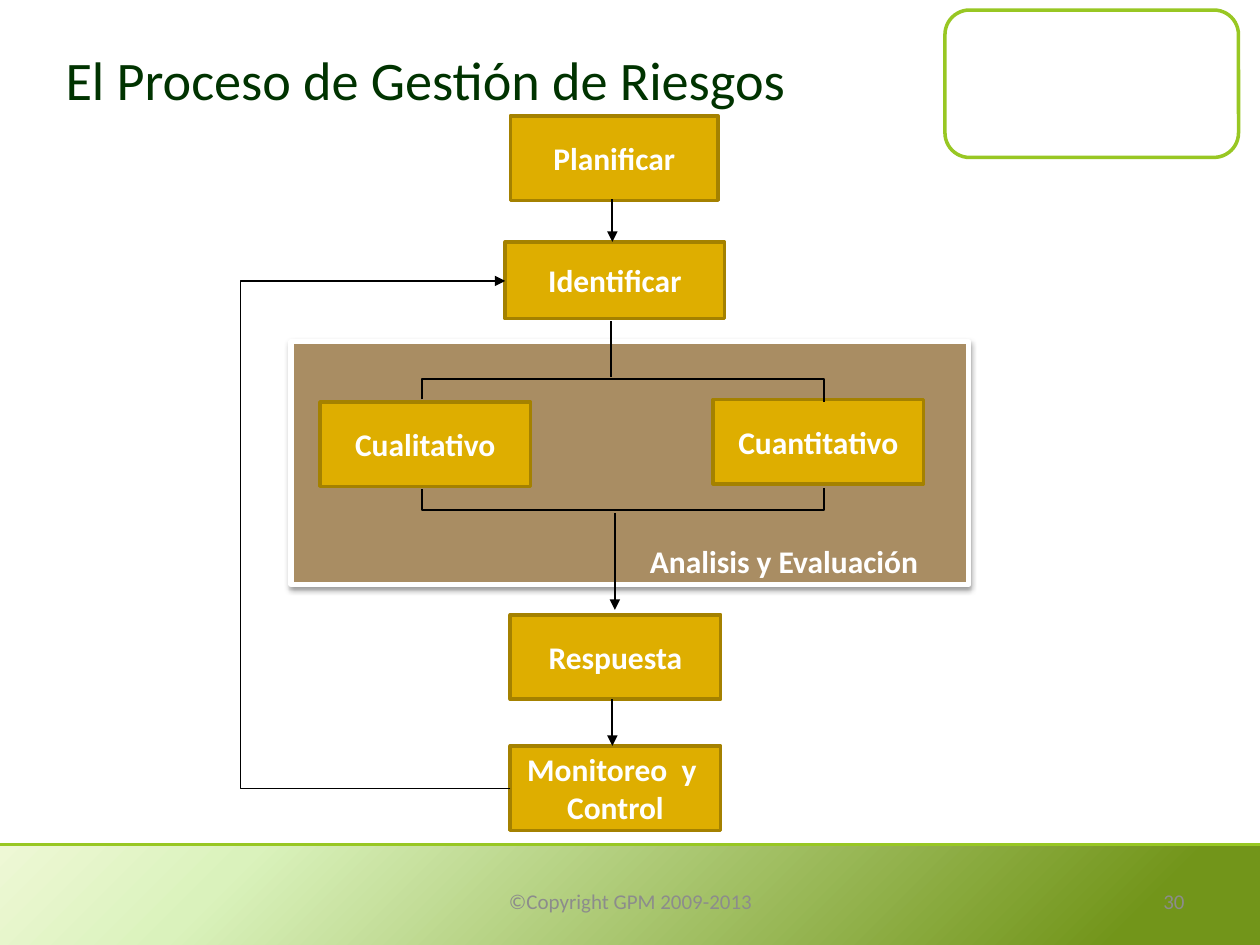
"""Build the risk management process slide."""
import copy

import pptx
import pptx.dml.color
import pptx.enum.shapes
import pptx.enum.text
import pptx.oxml
import pptx.oxml.ns
import pptx.util

Inches, Pt = pptx.util.Inches, pptx.util.Pt
RGB = pptx.dml.color.RGBColor.from_string
SHAPE = pptx.enum.shapes.MSO_SHAPE
ALIGN = pptx.enum.text.PP_ALIGN
MIDDLE = pptx.enum.text.MSO_ANCHOR.MIDDLE
NS = pptx.oxml.ns.nsdecls("a")
COLORS = {
    "white": "FFFFFF", "black": "000000", "green": "98C723", "title": "003300",
    "panel": "A98D63", "box": "DEAE00", "box_line": "A48100", "footer": "8C8C8C",
}


def style_line(s, color, width, arrow=False):
    s.line.color.rgb = RGB(COLORS[color])
    s.line.width = Pt(width)
    spPr = s._element.spPr
    if arrow:
        ln = spPr.find(pptx.oxml.ns.qn("a:ln"))
        ln.append(pptx.oxml.parse_xml(f'<a:tailEnd {NS} type="triangle"/>'))
    spPr.append(pptx.oxml.parse_xml(f"<a:effectLst {NS}/>"))


def write(s, text, size, color, align, bold=False, wrap=True, anchor=MIDDLE):
    tf = s.text_frame
    tf.text = text
    tf.word_wrap = wrap
    tf.vertical_anchor = anchor
    values = {"name": "Calibri", "size": Pt(size), "bold": bold}
    for p in tf.paragraphs:
        p.alignment = align
        for r in p.runs:
            for name, value in values.items():
                setattr(r.font, name, value)
            r.font.color.rgb = RGB(COLORS[color])


prs = pptx.Presentation()
prs.slide_width, prs.slide_height = Inches(10), Inches(7.5)
slide = prs.slides.add_slide(prs.slide_layouts[5])
shapes = slide.shapes

title = shapes.title
frame = {"left": 0.42, "top": 0, "width": 6.75, "height": 1.25}
for name, value in frame.items():
    setattr(title, name, Inches(value))
write(title, "El Proceso de Gestión de Riesgos", 31, "title", ALIGN.LEFT)

logo_frame = shapes.add_shape(
    SHAPE.ROUNDED_RECTANGLE, Inches(7.5), Inches(0.08), Inches(2.33), Inches(1.17))
logo_frame.fill.solid()
logo_frame.fill.fore_color.rgb = RGB(COLORS["white"])
style_line(logo_frame, "green", 2)

band = shapes.add_shape(SHAPE.RECTANGLE, 0, Inches(6.71), Inches(10), Inches(0.82))
band.shadow.inherit = False
band.line.fill.background()
band.fill.gradient()
band.fill.gradient_angle = 315
stop_list = band._element.spPr.find(".//" + pptx.oxml.ns.qn("a:gsLst"))
stop_list.append(copy.deepcopy(stop_list[0]))
stops = [(0, "EEF8D5"), (0.19, "DAF2BC"), (0.89, "72951A")]
for stop, (position, color) in zip(band.fill.gradient_stops, stops):
    stop.position = position
    stop.color.rgb = RGB(color)

panel = shapes.add_shape(
    SHAPE.RECTANGLE, Inches(2.31), Inches(2.71), Inches(5.38), Inches(1.93))
panel.fill.solid()
panel.fill.fore_color.rgb = RGB(COLORS["panel"])
style_line(panel, "white", 3)
panel._element.spPr[-1].append(pptx.oxml.parse_xml(
    f'<a:outerShdw {NS} blurRad="{Pt(3.1)}" dist="{Pt(1.6)}" dir="5400000" rotWithShape="0">'
    '<a:srgbClr val="000000"><a:alpha val="38000"/></a:srgbClr></a:outerShdw>'))

steps = [
    ("Planificar", 4.05, 0.92, 1.65, 0.67),
    ("Identificar", 4.01, 1.92, 1.74, 0.61),
    ("Cualitativo", 2.54, 3.19, 1.67, 0.67),
    ("Cuantitativo", 5.66, 3.17, 1.67, 0.67),
    ("Respuesta", 4.05, 4.88, 1.67, 0.67),
    ("Monitoreo  y \nControl", 4.05, 5.92, 1.67, 0.67),
]
for text, *box in steps:
    s = shapes.add_shape(SHAPE.RECTANGLE, *map(Inches, box))
    s.fill.solid()
    s.fill.fore_color.rgb = RGB(COLORS["box"])
    style_line(s, "box_line", 2)
    write(s, text, 18, "white", ALIGN.CENTER, bold=True, wrap=False)

lines = [
    ((0, 6.7, 10, 6.7), "green", 1.5, False),
    ((4.86, 1.58, 4.86, 1.92), "black", 1, True),
    ((4.85, 2.55, 4.85, 2.99), "black", 1, False),
    ((4.88, 4.07, 4.88, 4.84), "black", 1, True),
    ((4.86, 5.55, 4.86, 5.92), "black", 1, True),
]
for ends, color, width, arrow in lines:
    s = shapes.add_connector(
        pptx.enum.shapes.MSO_CONNECTOR.STRAIGHT, *map(Inches, ends))
    style_line(s, color, width, arrow)

paths = [
    ([(3.35, 3.17), (3.35, 3.01), (6.54, 3.01), (6.54, 3.19)], 1, False),
    ([(3.35, 3.88), (3.35, 4.05), (6.54, 4.05), (6.54, 3.87)], 1, False),
    ([(4.05, 6.26), (1.91, 6.26), (1.91, 2.23), (4.01, 2.23)], 0.75, True),
]
for points, width, arrow in paths:
    start, *rest = [(Inches(x), Inches(y)) for x, y in points]
    builder = shapes.build_freeform(*start)
    builder.add_line_segments(rest, close=False)
    s = builder.convert_to_shape()
    s.fill.background()
    style_line(s, "black", width, arrow)

TOP = pptx.enum.text.MSO_ANCHOR.TOP
labels = [
    ("Analisis y Evaluación", (5.06, 4.25, 2.6, 0.4), 18, "white", ALIGN.LEFT, True, TOP),
    ("©Copyright GPM 2009-2013", (3.42, 6.95, 3.17, 0.4), 12, "footer", ALIGN.CENTER, False, MIDDLE),
    ("30", (7.17, 6.95, 2.33, 0.4), 12, "footer", ALIGN.RIGHT, False, MIDDLE),
]
for text, box, size, color, align, bold, anchor in labels:
    s = shapes.add_textbox(*map(Inches, box))
    write(s, text, size, color, align, bold=bold, anchor=anchor)

prs.save("out.pptx")
